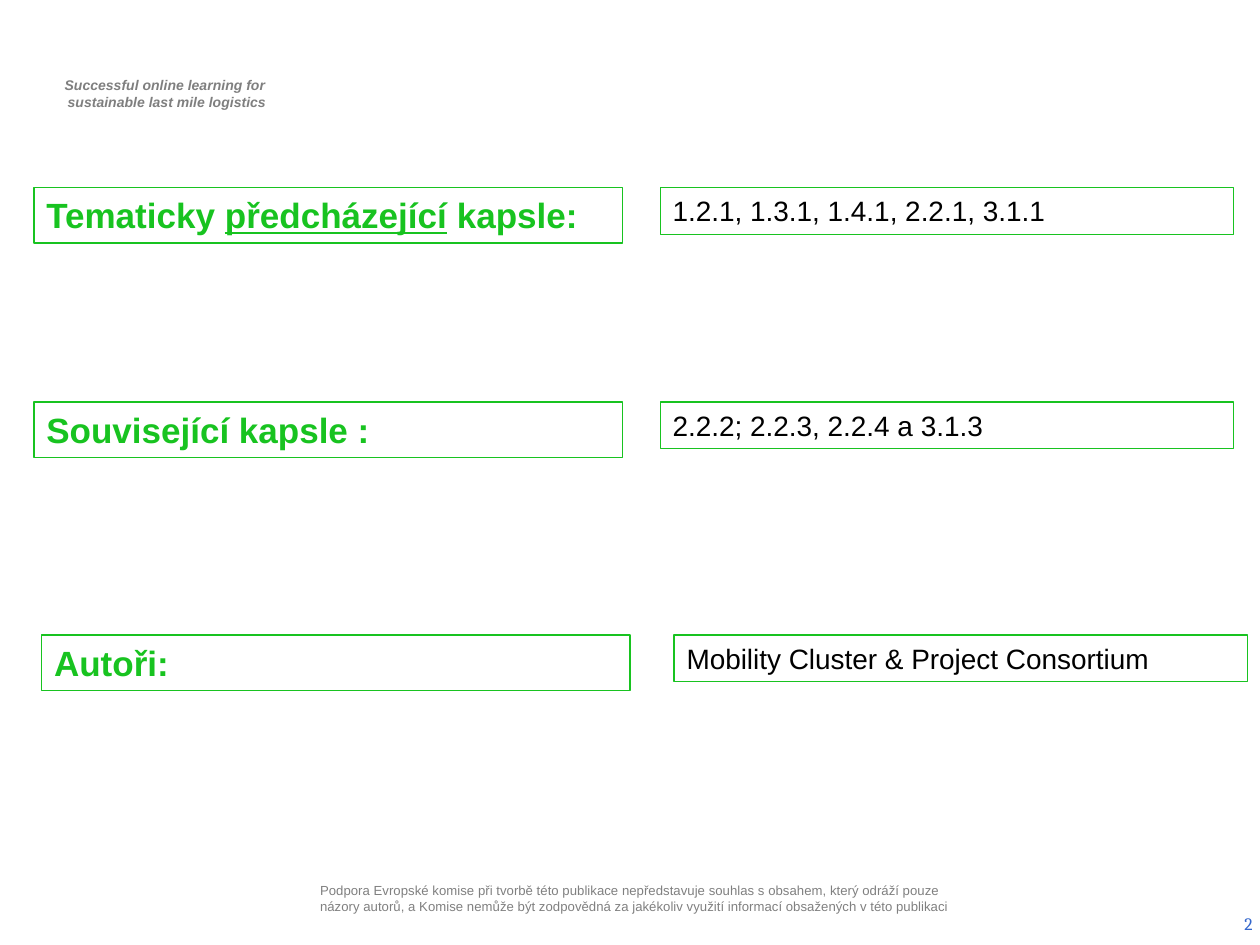
"""Build the slide that lists linked capsules and authors."""
from dataclasses import dataclass

from pptx import Presentation
from pptx.dml.color import RGBColor as Rgb
from pptx.enum.shapes import MSO_SHAPE as Kind
from pptx.enum.text import MSO_ANCHOR as Anchor, MSO_AUTO_SIZE as Fit, PP_ALIGN as Align
from pptx.util import Pt


@dataclass(frozen=True)
class Theme:
    sans: str = "Arial"
    serif: str = "Cambria"
    green: str = "18C320"
    white: str = "FFFFFF"
    black: str = "000000"
    gray: str = "7F7F7F"
    pale: str = "808080"
    blue: str = "3366CC"
    label: float = 20
    value: float = 16
    page: float = 10
    motto: float = 8
    note: float = 7.5


class Page:
    def __init__(self, slide, theme):
        self.slide, self.theme = slide, theme

    def style(self, para, size, color, bold=False, italic=False, face=None, align=Align.LEFT):
        para.alignment = align
        font = para.font
        font.name, font.size = face or self.theme.sans, Pt(size)
        font.bold, font.italic = bold, italic
        font.color.rgb = Rgb.from_string(color)

    def text(self, spot, lines, size, color, inset=None, indent=0, anchor=Anchor.TOP, **look):
        frame = self.slide.shapes.add_textbox(*map(Pt, spot)).text_frame
        frame.word_wrap, frame.vertical_anchor = True, anchor
        if inset is not None:
            frame.margin_left = frame.margin_right = Pt(inset)
            frame.margin_top = frame.margin_bottom = Pt(inset)
        frame.text = "\n".join(lines)
        for para in frame.paragraphs:
            if indent:
                para._p.get_or_add_pPr().set("marL", str(Pt(indent)))
            self.style(para, size, color, **look)

    def box(self, spot, parts, size, color, bold=False):
        shape = self.slide.shapes.add_shape(Kind.RECTANGLE, *map(Pt, spot))
        shape.shadow.inherit = False
        shape.fill.solid()
        shape.fill.fore_color.rgb = Rgb.from_string(self.theme.white)
        shape.line.color.rgb = Rgb.from_string(self.theme.green)
        shape.line.width = Pt(0.75)
        frame = shape.text_frame
        frame.word_wrap, frame.auto_size = True, Fit.SHAPE_TO_FIT_TEXT
        frame.vertical_anchor = Anchor.TOP
        para = frame.paragraphs[0]
        self.style(para, size, color, bold)
        for words, under in parts:
            run = para.add_run()
            run.text = words
            if under:
                run.font.underline = True

    def row(self, top, left, right, label, value):
        theme = self.theme
        self.box((left, top, 336.2, 31.7), label, theme.label, theme.green, True)
        self.box((right, top, 327.6, 26.6), [(value, False)], theme.value, theme.black)


def main():
    deck = Presentation()
    deck.slide_width, deck.slide_height = Pt(720), Pt(540)
    theme = Theme()
    page = Page(deck.slides.add_slide(deck.slide_layouts[6]), theme)
    page.text((20.9, 40.3, 146.2, 26.6),
              ["Successful online learning for ", "sustainable last mile logistics"],
              theme.motto, theme.gray, indent=2.9, bold=True, italic=True, align=Align.CENTER)
    page.text((180, 495.4, 367.2, 36),
              ["Podpora Evropské komise při tvorbě této publikace nepředstavuje souhlas "
               "s obsahem, který odráží pouze názory autorů, a Komise nemůže být zodpovědná "
               "za jakékoliv využití informací obsažených v této publikaci"],
              theme.note, theme.pale, inset=2.9, anchor=Anchor.MIDDLE)
    page.text((555.1, 513.4, 167.8, 28.8), ["2"], theme.page, theme.blue,
              anchor=Anchor.MIDDLE, face=theme.serif, align=Align.RIGHT)
    rows = [
        (107.3, 19.4, 377.3,
         [("Tematicky ", False), ("předcházející", True), (" kapsle:", False)],
         "1.2.1, 1.3.1, 1.4.1, 2.2.1, 3.1.1"),
        (229.7, 19.4, 377.3, [("Související kapsle :", False)], "2.2.2; 2.2.3, 2.2.4 a 3.1.3"),
        (362.9, 23.8, 385.2, [("Autoři:", False)], "Mobility Cluster & Project Consortium"),
    ]
    for row in rows:
        page.row(*row)
    deck.save("out.pptx")


if __name__ == "__main__":
    main()
